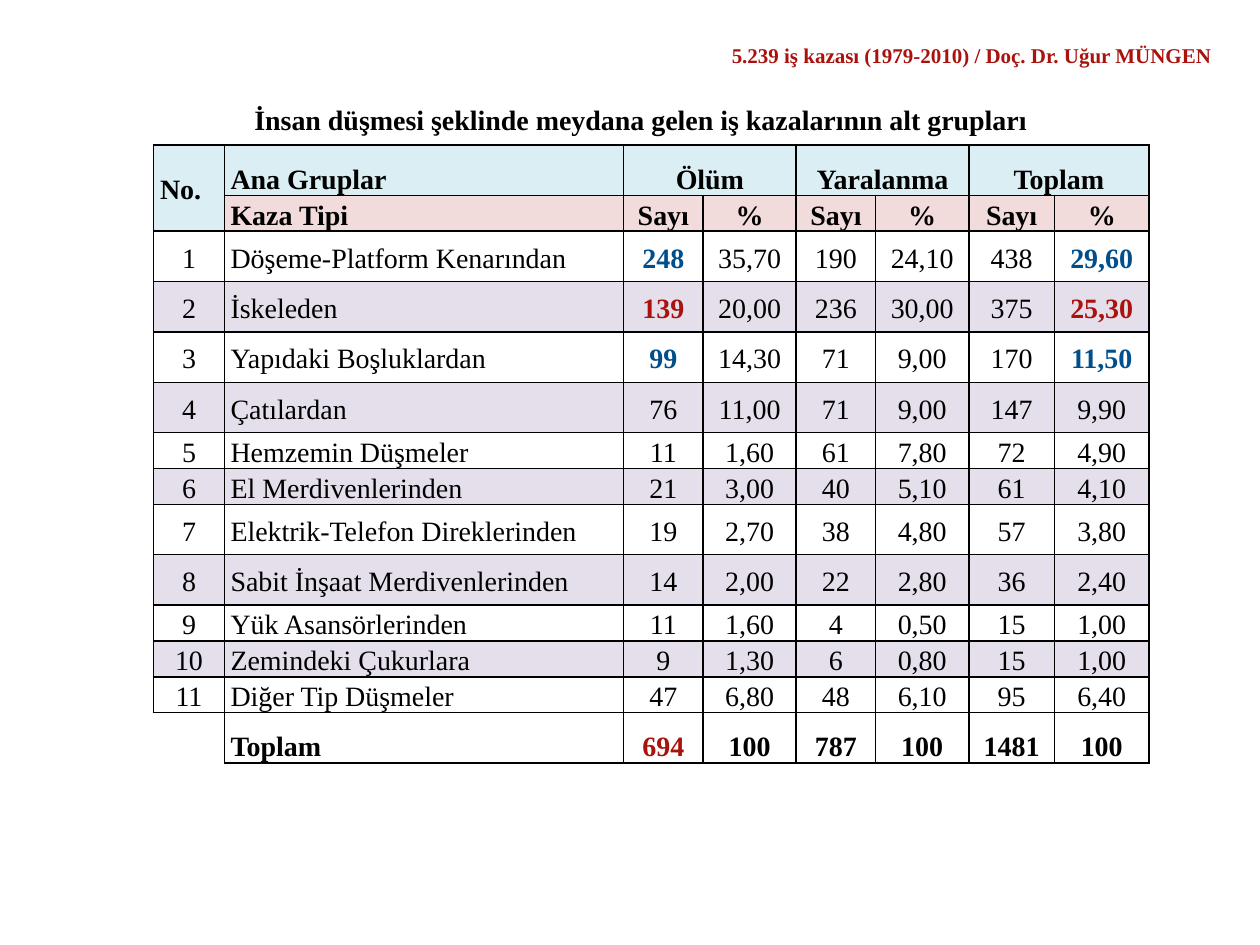
from lxml import etree
from pptx import Presentation
from pptx.dml.color import RGBColor
from pptx.enum import text
from pptx.oxml import ns
from pptx.util import Inches, Pt

THEME = {
    "font": "Times New Roman", "size": 16, "small": 12,
    "black": "000000", "blue": "004F8A", "red": "AA120E",
    "group": "DAEEF3", "subhead": "F2DBDB", "band": "E5DFEC",
}
CAPTION = "İnsan düşmesi şeklinde meydana gelen iş kazalarının alt grupları"
SOURCE = "5.239 iş kazası (1979-2010) / Doç. Dr. Uğur MÜNGEN"
HEADERS = [
    ["No.", "Ana Gruplar", "Ölüm", "", "Yaralanma", "", "Toplam", ""],
    ["", "Kaza Tipi"] + ["Sayı", "%"] * 3,
]
ACCIDENTS = [
    ["Döşeme-Platform Kenarından", "248", "35,70", "190", "24,10", "438", "29,60"],
    ["İskeleden", "139", "20,00", "236", "30,00", "375", "25,30"],
    ["Yapıdaki Boşluklardan", "99", "14,30", "71", "9,00", "170", "11,50"],
    ["Çatılardan", "76", "11,00", "71", "9,00", "147", "9,90"],
    ["Hemzemin Düşmeler", "11", "1,60", "61", "7,80", "72", "4,90"],
    ["El Merdivenlerinden", "21", "3,00", "40", "5,10", "61", "4,10"],
    ["Elektrik-Telefon Direklerinden", "19", "2,70", "38", "4,80", "57", "3,80"],
    ["Sabit İnşaat Merdivenlerinden", "14", "2,00", "22", "2,80", "36", "2,40"],
    ["Yük Asansörlerinden", "11", "1,60", "4", "0,50", "15", "1,00"],
    ["Zemindeki Çukurlara", "9", "1,30", "6", "0,80", "15", "1,00"],
    ["Diğer Tip Düşmeler", "47", "6,80", "48", "6,10", "95", "6,40"],
]
TOTALS = ["", "Toplam", "694", "100", "787", "100", "1481", "100"]
ROWS = HEADERS + [[str(n), *row] for n, row in enumerate(ACCIDENTS, 1)] + [TOTALS]
LAST = len(ROWS) - 1
HIGHLIGHTS = {
    (2, 2): "blue", (2, 7): "blue", (3, 2): "red", (3, 7): "red",
    (4, 2): "blue", (4, 7): "blue", (LAST, 2): "red",
}
MERGES = [((0, 0), (1, 0)), ((0, 2), (0, 3)), ((0, 4), (0, 5)), ((0, 6), (0, 7))]
COLUMN_WIDTHS = [0.56, 3.17, 0.63, 0.74, 0.63, 0.74, 0.68, 0.75]
SHORT_ROWS = {1, 6, 7, 10, 11, 12}
TALL, SHORT = 0.4, 0.26


def write(frame, content, size=THEME["size"], color="black", bold=True,
          align=text.PP_ALIGN.LEFT, spacing=None, gap=0):
    paragraph = frame.paragraphs[0]
    paragraph.alignment = align
    paragraph.line_spacing = spacing
    paragraph.space_before = paragraph.space_after = Pt(gap)
    paragraph.font.size = Pt(size)
    if content:
        run = paragraph.add_run()
        run.text = content
        run.font.name = THEME["font"]
        run.font.size = Pt(size)
        run.font.bold = bold
        run.font.color.rgb = RGBColor.from_string(THEME[color])


def set_borders(cell, visible):
    """Draw the sides named in visible (L, R, T, B) and clear the others."""
    properties = cell._tc.get_or_add_tcPr()
    for index, side in enumerate("LRTB"):
        line = etree.Element(ns.qn(f"a:ln{side}"), w=str(Pt(1)))
        if side in visible:
            fill = etree.SubElement(line, ns.qn("a:solidFill"))
            etree.SubElement(fill, ns.qn("a:srgbClr"), val=THEME["black"])
        else:
            etree.SubElement(line, ns.qn("a:noFill"))
        properties.insert(index, line)


def cell_fill(row, column):
    if row == 0 or (row, column) == (1, 0):
        return "group"
    if row == 1:
        return "subhead"
    return "band" if row % 2 and row < LAST else None


def cell_anchor(row, column):
    at_bottom = row == LAST or (row == 0 and column > 0) or (row, column) == (1, 1)
    return text.MSO_ANCHOR.BOTTOM if at_bottom else text.MSO_ANCHOR.MIDDLE


def cell_align(row, column):
    if (row, column) == (0, 1):
        return text.PP_ALIGN.LEFT
    if column == 1 or (row, column) == (0, 0):
        return text.PP_ALIGN.JUSTIFY
    return text.PP_ALIGN.CENTER


def format_cell(cell, row, column):
    cell.margin_left = cell.margin_right = Inches(0.05)
    cell.margin_top = cell.margin_bottom = 0
    cell.vertical_anchor = cell_anchor(row, column)
    fill = cell_fill(row, column)
    if fill:
        cell.fill.solid()
        cell.fill.fore_color.rgb = RGBColor.from_string(THEME[fill])
    else:
        cell.fill.background()
    set_borders(cell, "RT" if (row, column) == (LAST, 0) else "LRTB")
    highlight = HIGHLIGHTS.get((row, column))
    write(cell.text_frame, ROWS[row][column], color=highlight or "black",
          bold=row < 2 or row == LAST or highlight is not None,
          align=cell_align(row, column), spacing=1.15, gap=1.5)


def add_accident_table(slide):
    heights = [SHORT if row in SHORT_ROWS else TALL for row in range(len(ROWS))]
    table = slide.shapes.add_table(
        len(ROWS), len(COLUMN_WIDTHS), Inches(1.22), Inches(1.15),
        Inches(sum(COLUMN_WIDTHS)), Inches(sum(heights))).table
    table.first_row = table.horz_banding = False
    for column, width in zip(table.columns, COLUMN_WIDTHS):
        column.width = Inches(width)
    for row, height in zip(table.rows, heights):
        row.height = Inches(height)
    for row, values in enumerate(ROWS):
        for column in range(len(values)):
            format_cell(table.cell(row, column), row, column)
    for first, last in MERGES:
        table.cell(*first).merge(table.cell(*last))


def main():
    presentation = Presentation()
    presentation.slide_width, presentation.slide_height = Inches(10), Inches(7.5)
    slide = presentation.slides.add_slide(presentation.slide_layouts[5])
    add_accident_table(slide)

    title = slide.shapes.title
    title.left, title.top = Inches(1.22), Inches(0.76)
    title.width, title.height = Inches(7.73), Inches(0.37)
    title.text_frame.auto_size = text.MSO_AUTO_SIZE.NONE
    title.text_frame.vertical_anchor = text.MSO_ANCHOR.TOP
    write(title.text_frame, CAPTION, align=text.PP_ALIGN.CENTER)

    source = slide.shapes.add_textbox(Inches(5.71), Inches(0.29), Inches(4.06), Inches(0.3))
    source.text_frame.word_wrap = True
    write(source.text_frame, SOURCE, size=THEME["small"], color="red")
    presentation.save("out.pptx")


if __name__ == "__main__":
    main()
